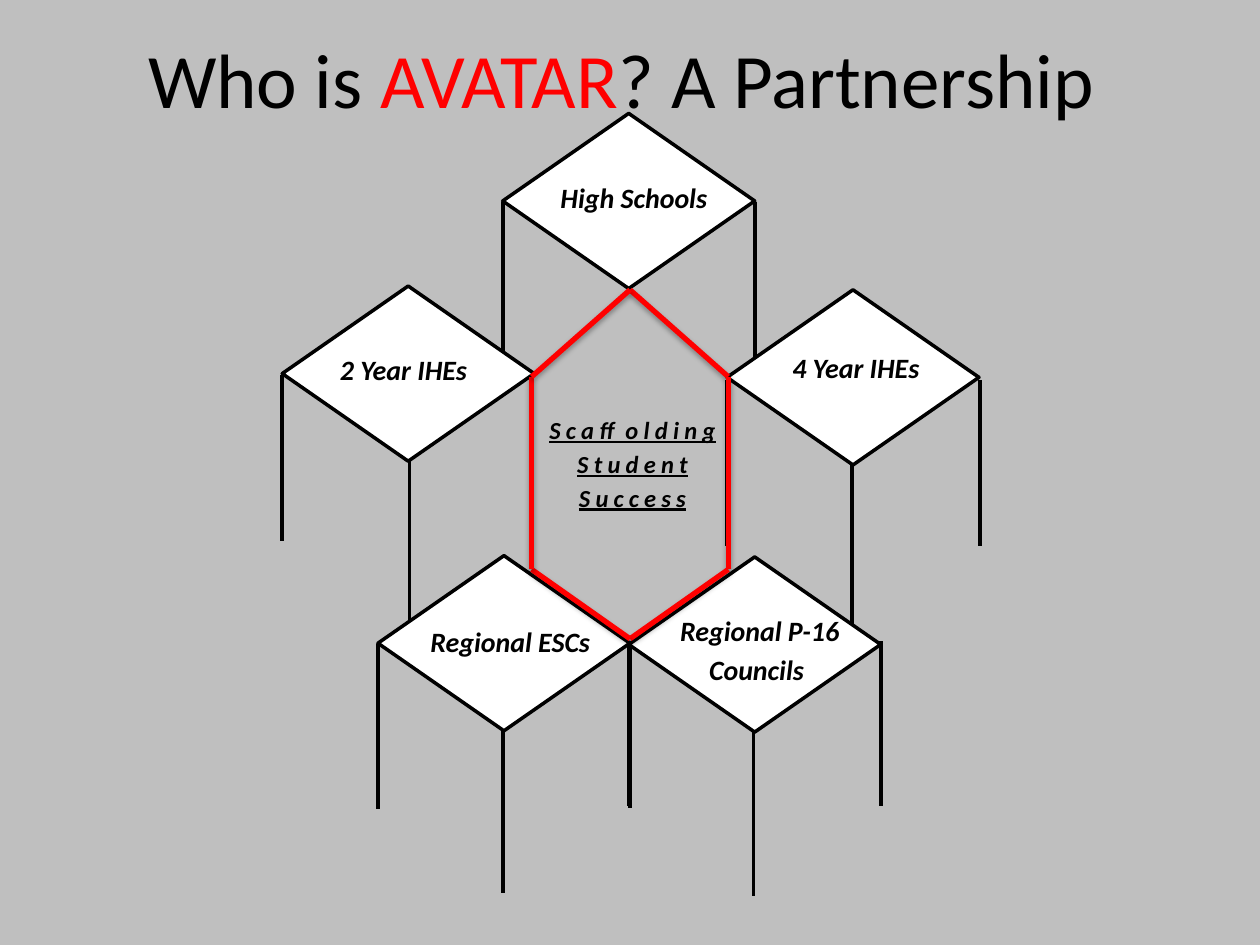
from lxml import etree
from pptx import Presentation
from pptx.dml.color import RGBColor
from pptx.enum.shapes import MSO_CONNECTOR as CONNECTOR, MSO_SHAPE as SHAPE
from pptx.enum.text import MSO_ANCHOR as ANCHOR, PP_ALIGN as ALIGN
from pptx.oxml import parse_xml
from pptx.oxml.ns import nsdecls, qn
from pptx.util import Inches, Pt

SHADOW = (
    f'<a:effectLst {nsdecls("a")}>'
    '<a:outerShdw blurRad="40000" dist="23000" dir="5400000" rotWithShape="0">'
    '<a:srgbClr val="000000"><a:alpha val="35000"/></a:srgbClr>'
    '</a:outerShdw></a:effectLst>'
)


def color(hex_string):
    return RGBColor.from_string(hex_string)


def add_line(start, end, hex_string, width, shadow=False):
    line = slide.shapes.add_connector(
        CONNECTOR.STRAIGHT, *[Inches(v) for v in (*start, *end)])
    line.line.color.rgb = color(hex_string)
    line.line.width = Pt(width)
    properties = line._element.spPr
    if shadow:
        properties.append(parse_xml(SHADOW))
    else:
        etree.SubElement(properties, qn("a:effectLst"))


prs = Presentation()
prs.slide_width, prs.slide_height = Inches(10), Inches(7.5)
slide = prs.slides.add_slide(prs.slide_layouts[6])
slide.background.fill.solid()
slide.background.fill.fore_color.rgb = color("BFBFBF")

# Partners: label lines, diamond corner, label corner, alignment, leg tops
LEG = 1.31
partners = [
    (["High Schools"], (3.99, 0.9), (4.35, 1.34), ALIGN.LEFT,
     [(3.99, 1.6), (5.99, 1.6)]),
    (["4 Year IHEs"], (5.77, 2.3), (6.19, 2.69), ALIGN.LEFT,
     [(5.77, 3.02), (6.76, 3.68), (7.78, 3.02)]),
    (["Regional P-16", "Councils "], (4.99, 4.42), (5.21, 4.78), ALIGN.CENTER,
     [(4.99, 5.09), (5.98, 5.8), (6.99, 5.09)]),
    (["2 Year IHEs"], (2.24, 2.27), (2.6, 2.71), ALIGN.LEFT,
     [(2.24, 2.98), (3.25, 3.66), (4.22, 2.98)]),
    (["Regional ESCs"], (3, 4.41), (3.23, 4.87), ALIGN.CENTER,
     [(3, 5.11), (3.99, 5.78), (5, 5.1)]),
]
for label_lines, (left, top), (label_left, label_top), align, legs in partners:
    for x, y in legs:
        add_line((x, y), (x, y + LEG), "000000", 2.25)

    diamond = slide.shapes.add_shape(
        SHAPE.FLOWCHART_DECISION, Inches(left), Inches(top), Inches(2), Inches(1.39))
    diamond.shadow.inherit = False
    diamond.fill.solid()
    diamond.fill.fore_color.rgb = color("FFFFFF")
    diamond.line.color.rgb = color("000000")
    diamond.line.width = Pt(2)

    label = slide.shapes.add_textbox(
        Inches(label_left), Inches(label_top), Inches(1.64), Inches(0.81)).text_frame
    label.word_wrap = True
    label.text = "\n".join(label_lines)
    for paragraph in label.paragraphs:
        paragraph.alignment = align
        paragraph.line_spacing = 1.15
        font = paragraph.font
        font.name, font.size = "Calibri", Pt(16)
        font.bold = font.italic = True
        font.color.rgb = color("000000")

# Shared goal in the centre
goal = slide.shapes.add_textbox(
    Inches(4.24), Inches(3.21), Inches(1.56), Inches(1.08)).text_frame
goal.word_wrap = True
goal.text = "Scaffolding\nStudent\nSuccess"
for paragraph in goal.paragraphs:
    paragraph.alignment = ALIGN.CENTER
    paragraph.line_spacing = 1.15
    font = paragraph.font
    font.name, font.size = "Calibri", Pt(14)
    font.bold = font.italic = font.underline = True
    font.color.rgb = color("000000")
    for run in paragraph.runs:
        run._r.get_or_add_rPr().set("spc", "300")

# Red hexagon around the goal
corners = [(5, 2.3), (5.78, 2.99), (5.78, 4.52), (5, 5.07), (4.22, 4.52), (4.22, 2.99)]
for start, end in zip(corners, corners[1:] + corners[:1]):
    add_line(start, end, "FF0000", 3, shadow=True)

# Title
title = slide.shapes.add_textbox(
    Inches(0.5), Inches(-0.01), Inches(9), Inches(1.25)).text_frame
title.word_wrap = True
title.vertical_anchor = ANCHOR.MIDDLE
heading = title.paragraphs[0]
heading.alignment = ALIGN.CENTER
heading.font.name, heading.font.size = "Calibri", Pt(44)
for words, hex_string in [("Who is ", "000000"), ("AVATAR", "FF0000"),
                          ("? A Partnership ", "000000")]:
    run = heading.add_run()
    run.text = words
    run.font.color.rgb = color(hex_string)

prs.save("out.pptx")
